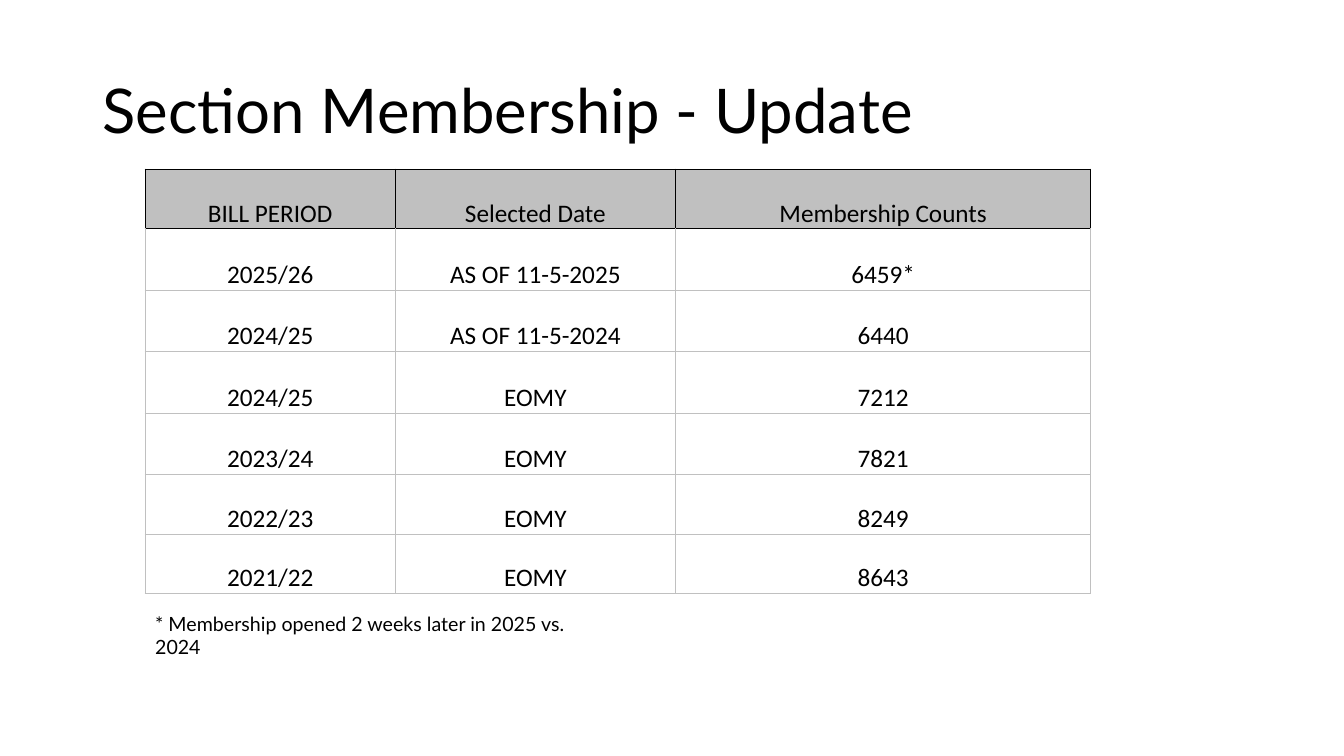
from lxml import etree
from pptx import Presentation
from pptx.dml.color import RGBColor
from pptx.enum.text import MSO_ANCHOR, PP_ALIGN
from pptx.oxml.ns import qn
from pptx.util import Inches, Pt

MIDDLE, TOP, BOTTOM = MSO_ANCHOR.MIDDLE, MSO_ANCHOR.TOP, MSO_ANCHOR.BOTTOM
CENTER = PP_ALIGN.CENTER
BLACK = RGBColor(0x00, 0x00, 0x00)
SILVER = RGBColor(0xC0, 0xC0, 0xC0)

# Content
TITLE = "Section Membership - Update"
MEMBERSHIP = [
    ("BILL PERIOD", "Selected Date", "Membership Counts"),
    ("2025/26", "AS OF 11-5-2025", "6459*"),
    ("2024/25", "AS OF 11-5-2024", "6440"),
    ("2024/25", "EOMY", "7212"),
    ("2023/24", "EOMY", "7821"),
    ("2022/23", "EOMY", "8249"),
    ("2021/22", "EOMY", "8643"),
]
NOTE = "* Membership opened 2 weeks later in 2025 vs. 2024"

# Layout, in inches
COLUMN_WIDTHS = [2.48, 2.78, 4.12]
ROW_HEIGHTS = [0.59] + [0.61] * 4 + [0.59] * 2
TABLE_LEFT, TABLE_TOP = 1.44, 1.68


def style(para, font_name, size):
    para.font.name = font_name
    para.font.size = Pt(size)
    para.font.color.rgb = BLACK


def add_text(page, place, text, size, anchor, line_spacing):
    box = page.shapes.add_textbox(*map(Inches, place))
    box.text_frame.word_wrap = True
    box.text_frame.vertical_anchor = anchor
    para = box.text_frame.paragraphs[0]
    para.text = text
    para.line_spacing = line_spacing
    style(para, "Lato", size)


def set_borders(cell, colors):
    """Draw 1 pt borders; colors maps the side letters L, R, T, B."""
    properties = cell._tc.get_or_add_tcPr()
    for side, color in colors.items():
        line = etree.SubElement(properties, qn("a:ln" + side), w=str(Pt(1)))
        fill = etree.SubElement(line, qn("a:solidFill"))
        etree.SubElement(fill, qn("a:srgbClr"), val=str(color))


def fill_cell(cell, text, row):
    cell.text = text
    cell.vertical_anchor = BOTTOM
    cell.margin_left = cell.margin_right = Inches(0.07)
    cell.margin_top = cell.margin_bottom = 0
    para = cell.text_frame.paragraphs[0]
    para.alignment = CENTER
    style(para, "Calibri", 18)

    edge = BLACK if row == 0 else SILVER
    top = BLACK if row <= 1 else SILVER
    set_borders(cell, {"L": edge, "R": edge, "T": top, "B": edge})
    if row == 0:
        cell.fill.solid()
        cell.fill.fore_color.rgb = SILVER
    else:
        cell.fill.background()


def add_membership_table(page):
    frame = page.shapes.add_table(
        len(MEMBERSHIP), len(COLUMN_WIDTHS), Inches(TABLE_LEFT), Inches(TABLE_TOP),
        Inches(sum(COLUMN_WIDTHS)), Inches(sum(ROW_HEIGHTS)))
    table = frame.table
    table.horz_banding = False
    for column, width in zip(table.columns, COLUMN_WIDTHS):
        column.width = Inches(width)
    # The header is styled directly, without the bold table style
    table.first_row = False
    for row, (values, height) in enumerate(zip(MEMBERSHIP, ROW_HEIGHTS)):
        table.rows[row].height = Inches(height)
        for column, text in enumerate(values):
            fill_cell(table.cell(row, column), text, row)


def main():
    deck = Presentation()
    deck.slide_width, deck.slide_height = Inches(13.33), Inches(7.5)
    page = deck.slides.add_slide(deck.slide_layouts[6])

    # Title, table and footnote
    add_text(page, (0.92, 0.4, 11.5, 1.45), TITLE, 44, MIDDLE, 0.9)
    add_membership_table(page)
    add_text(page, (TABLE_LEFT, 6.02, 4.62, 0.34), NOTE, 14, TOP, 1.0)

    deck.save("out.pptx")


if __name__ == "__main__":
    main()
